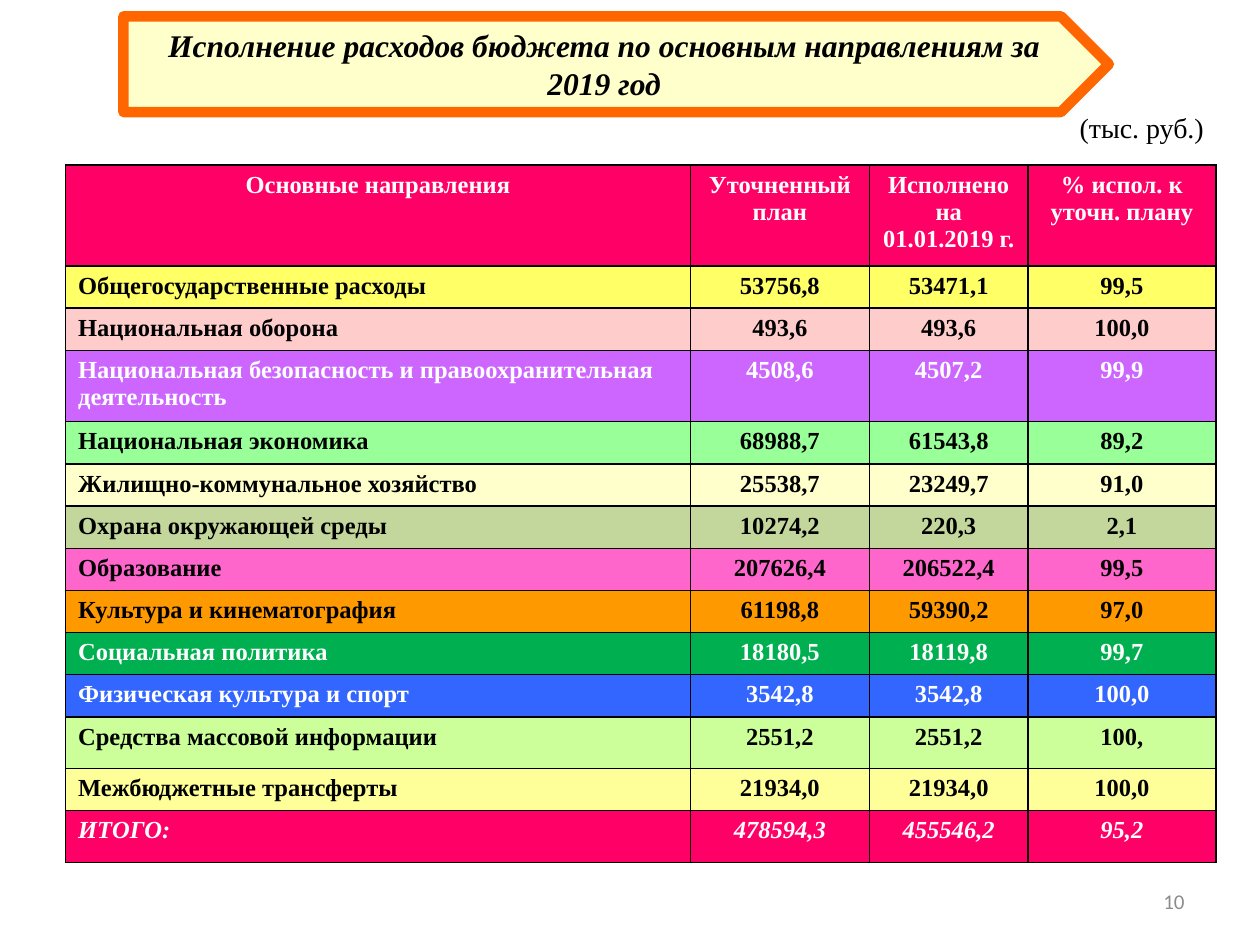
import pptx
import pptx.util
import pptx.oxml
import pptx.dml.color
import pptx.enum.shapes
import pptx.enum.text

Inches, Pt = pptx.util.Inches, pptx.util.Pt
Align = pptx.enum.text.PP_ALIGN
Anchor = pptx.enum.text.MSO_ANCHOR

SERIF = "Times New Roman"
COLORS = {
    "black": "000000", "white": "FFFFFF", "gray": "8C8C8C",
    "cream": "FFFFCC", "flame": "FF6600", "rose": "FF0066",
    "yellow": "FFFF66", "blush": "FFCCCC", "violet": "CC66FF",
    "mint": "99FF99", "olive": "C3D69B", "pink": "FF66CC",
    "orange": "FF9900", "green": "00B050", "blue": "3366FF",
    "lime": "CCFF99", "lemon": "FFFF99",
}

TITLE = "Исполнение расходов бюджета по основным направлениям за 2019 год"
UNIT = "(тыс. руб.)"
PAGE = "10"

# fill, text colour, row height, cells
LOW, MID = 0.335, 0.41
ROWS = [
    ("rose", "white", 0.8, ["Основные направления", "Уточненный план",
                            "Исполнено\nна 01.01.2019 г. ", "% испол. к уточн. плану"]),
    ("yellow", "black", LOW, ["Общегосударственные расходы", "53756,8", "53471,1", "99,5"]),
    ("blush", "black", LOW, ["Национальная оборона", "493,6", "493,6", "100,0"]),
    ("violet", "white", 0.56, ["Национальная безопасность и правоохранительная деятельность",
                               "4508,6", "4507,2", "99,9"]),
    ("mint", "black", LOW, ["Национальная экономика", "68988,7", "61543,8", "89,2"]),
    ("cream", "black", LOW, ["Жилищно-коммунальное хозяйство", "25538,7", "23249,7", "91,0"]),
    ("olive", "black", LOW, ["Охрана окружающей среды", "10274,2", "220,3", "2,1"]),
    ("pink", "black", LOW, ["Образование", "207626,4", "206522,4", "99,5"]),
    ("orange", "black", LOW, ["Культура и кинематография", "61198,8", "59390,2", "97,0"]),
    ("green", "white", LOW, ["Социальная политика", "18180,5", "18119,8", "99,7"]),
    ("blue", "white", LOW, ["Физическая культура и спорт", "3542,8", "3542,8", "100,0"]),
    ("lime", "black", MID, ["Средства массовой информации", "2551,2", "2551,2", "100,"]),
    ("lemon", "black", LOW, ["Межбюджетные трансферты", "21934,0", "21934,0", "100,0"]),
    ("rose", "white", MID, ["ИТОГО:", "478594,3", "455546,2", "95,2"]),
]
WIDTHS = [4.96, 1.42, 1.26, 1.49]


def color(name):
    return pptx.dml.color.RGBColor.from_string(COLORS[name])


def paint(shape, name):
    shape.fill.solid()
    shape.fill.fore_color.rgb = color(name)


def write(frame, text, tint, align, **style):
    frame.text = text
    for para in frame.paragraphs:
        para.alignment = align
        for run in para.runs:
            run.font.color.rgb = color(tint)
            for key, value in style.items():
                setattr(run.font, key, value)


def border(cell):
    props = cell._tc.get_or_add_tcPr()
    for spot, side in enumerate(("lnL", "lnR", "lnT", "lnB")):
        props.insert(spot, pptx.oxml.parse_xml(
            f'<a:{side} xmlns:a="http://schemas.openxmlformats.org/drawingml/2006/main"'
            f' w="{Pt(1)}"><a:solidFill><a:srgbClr val="{COLORS["black"]}"/>'
            f'</a:solidFill></a:{side}>'))


def add_title(slide):
    kind = pptx.enum.shapes.MSO_SHAPE.PENTAGON
    shape = slide.shapes.add_shape(kind, *map(Inches, (0.98, 0.13, 7.82, 0.76)))
    shape.shadow.inherit = False
    paint(shape, "cream")
    shape.line.color.rgb = color("flame")
    shape.line.width = Pt(6)
    shape.text_frame.vertical_anchor = Anchor.MIDDLE
    write(shape.text_frame, TITLE, "black", Align.CENTER,
          name=SERIF, size=Pt(18), bold=True, italic=True)


def add_note(slide, place, text, tint, align, wrap, anchor, **style):
    frame = slide.shapes.add_textbox(*map(Inches, place)).text_frame
    frame.word_wrap = wrap
    frame.vertical_anchor = anchor
    write(frame, text, tint, align, **style)


def add_budget(slide):
    tall = sum(row[2] for row in ROWS)
    place = map(Inches, (0.52, 1.31, sum(WIDTHS), tall))
    table = slide.shapes.add_table(len(ROWS), len(WIDTHS), *place).table
    for col, width in zip(table.columns, WIDTHS):
        col.width = Inches(width)
    last = len(ROWS) - 1
    for r, (fill, tint, height, texts) in enumerate(ROWS):
        table.rows[r].height = Inches(height)
        for c, text in enumerate(texts):
            cell = table.cell(r, c)
            paint(cell, fill)
            border(cell)
            align = Align.LEFT if r and not c else Align.CENTER
            write(cell.text_frame, text, tint, align,
                  name=SERIF, size=Pt(14), bold=True, italic=r == last)


def main():
    deck = pptx.Presentation()
    deck.slide_width, deck.slide_height = Inches(10), Inches(7.5)
    slide = deck.slides.add_slide(deck.slide_layouts[6])
    add_title(slide)
    add_note(slide, (7.17, 6.95, 2.33, 0.4), PAGE, "gray", Align.RIGHT,
             True, Anchor.MIDDLE, name="Calibri", size=Pt(12))
    add_budget(slide)
    add_note(slide, (8.47, 0.83, 1.2, 0.37), UNIT, "black", Align.LEFT,
             False, Anchor.TOP, name=SERIF, size=Pt(16))
    deck.save("out.pptx")


if __name__ == "__main__":
    main()
